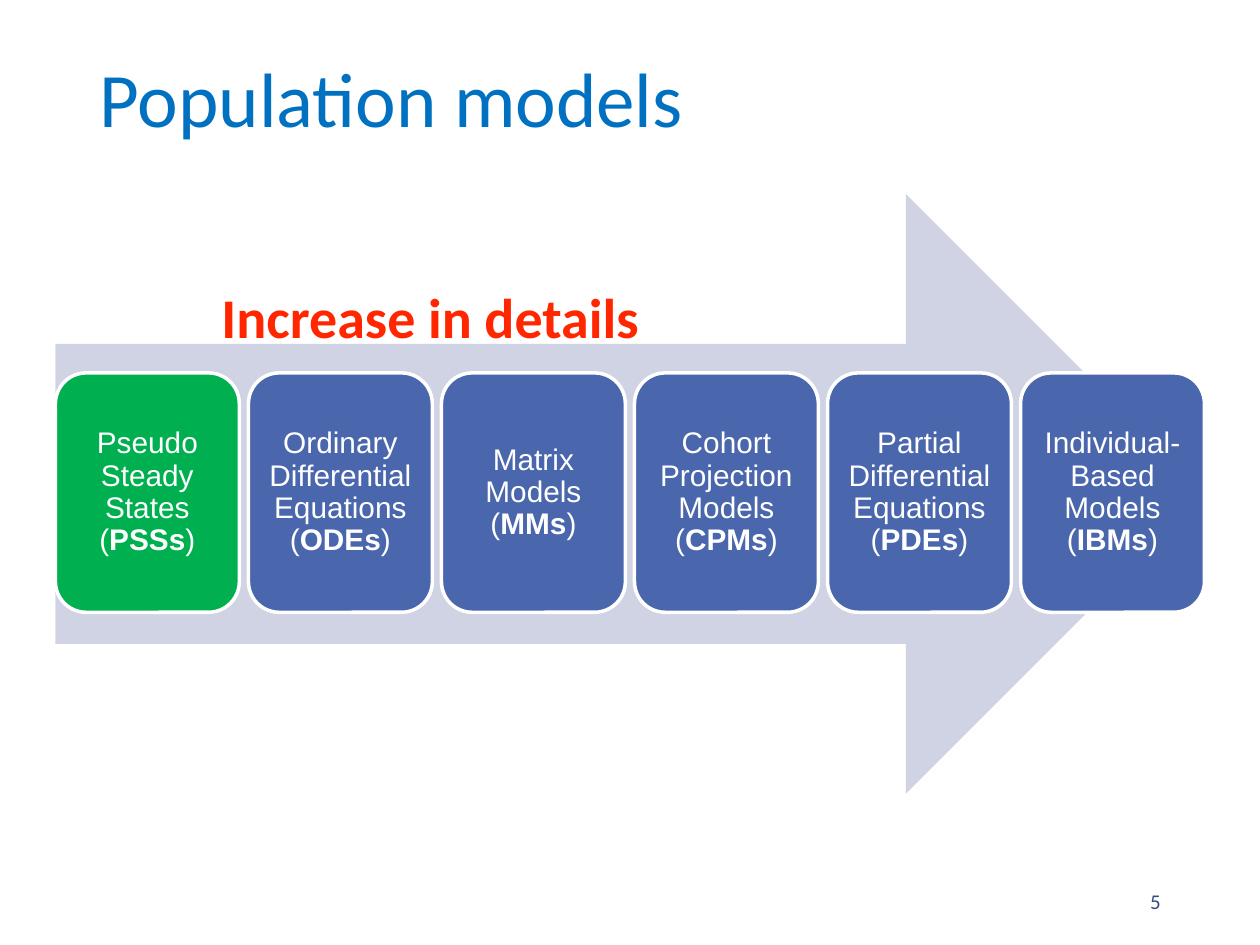
from pptx import Presentation
from pptx.dml.color import RGBColor
from pptx.enum.shapes import MSO_SHAPE
from pptx.enum.text import MSO_ANCHOR, PP_ALIGN
from pptx.util import Inches, Pt

ARROW = MSO_SHAPE.RIGHT_ARROW
ROUNDED = MSO_SHAPE.ROUNDED_RECTANGLE
TOP, MIDDLE = MSO_ANCHOR.TOP, MSO_ANCHOR.MIDDLE
LEFT, CENTER, RIGHT = PP_ALIGN.LEFT, PP_ALIGN.CENTER, PP_ALIGN.RIGHT

WHITE, GREEN, BLUE = "FFFFFF", "00B050", "4A66AC"
CARD_LEFT, CARD_TOP, CARD_WIDTH, CARD_HEIGHT = 0.44, 2.96, 1.46, 1.9
CARD_STEP = 1.532
CARD_INSET = 0.07
MODELS = [
    ("Pseudo Steady States", "PSSs"),
    ("Ordinary Differential Equations", "ODEs"),
    ("Matrix Models", "MMs"),
    ("Cohort Projection Models", "CPMs"),
    ("Partial Differential Equations", "PDEs"),
    ("Individual-Based Models", "IBMs"),
]


def rgb(color):
    return RGBColor.from_string(color)


def add_run(p, text, size, color, font="Calibri", bold=False):
    r = p.add_run()
    r.text = text
    for name, value in {"name": font, "size": Pt(size), "bold": bold}.items():
        setattr(r.font, name, value)
    r.font.color.rgb = rgb(color)


def add_label(s, box, text, size, color, align=LEFT, anchor=MIDDLE,
              bold=False, spacing=1.0):
    tf = s.shapes.add_textbox(*map(Inches, box)).text_frame
    tf.word_wrap = True
    tf.vertical_anchor = anchor
    p = tf.paragraphs[0]
    p.alignment = align
    p.line_spacing = spacing
    add_run(p, text, size, color, bold=bold)


def add_block(s, kind, box, fill, line=None):
    shape = s.shapes.add_shape(kind, *map(Inches, box))
    shape.shadow.inherit = False
    shape.fill.solid()
    shape.fill.fore_color.rgb = rgb(fill)
    if line:
        shape.line.color.rgb = rgb(line)
        shape.line.width = Pt(2)
    else:
        shape.line.fill.background()
    return shape


def add_model_card(s, left, name, short, fill):
    box = (left, CARD_TOP, CARD_WIDTH, CARD_HEIGHT)
    tf = add_block(s, ROUNDED, box, fill, WHITE).text_frame
    tf.word_wrap = True
    tf.vertical_anchor = MIDDLE
    for side in ("left", "top", "right", "bottom"):
        setattr(tf, f"margin_{side}", Inches(CARD_INSET))
    p = tf.paragraphs[0]
    p.alignment = CENTER
    p.line_spacing = 0.9
    for text, bold in ((f"{name} (", False), (short, True), (")", False)):
        add_run(p, text, 17, WHITE, "Arial", bold)


def main():
    prs = Presentation()
    prs.slide_width, prs.slide_height = Inches(10), Inches(7.5)
    s = prs.slides.add_slide(prs.slide_layouts[6])
    add_label(s, (0.69, 0.09, 8.62, 1.45), "Population models", 44, "0070C0",
              spacing=0.9)
    add_block(s, ARROW, (0.44, 1.54, 9.13, 4.76), "D0D3E3")
    for i, (name, short) in enumerate(MODELS):
        add_model_card(s, CARD_LEFT + i * CARD_STEP, name, short,
                       BLUE if i else GREEN)
    add_label(s, (7.06, 6.95, 2.25, 0.4), "5", 12, "374C81", align=RIGHT)
    add_label(s, (1.66, 2.19, 4.7, 0.64), "Increase in details", 32, "FF2600",
              anchor=TOP, bold=True)
    prs.save("out.pptx")


if __name__ == "__main__":
    main()
